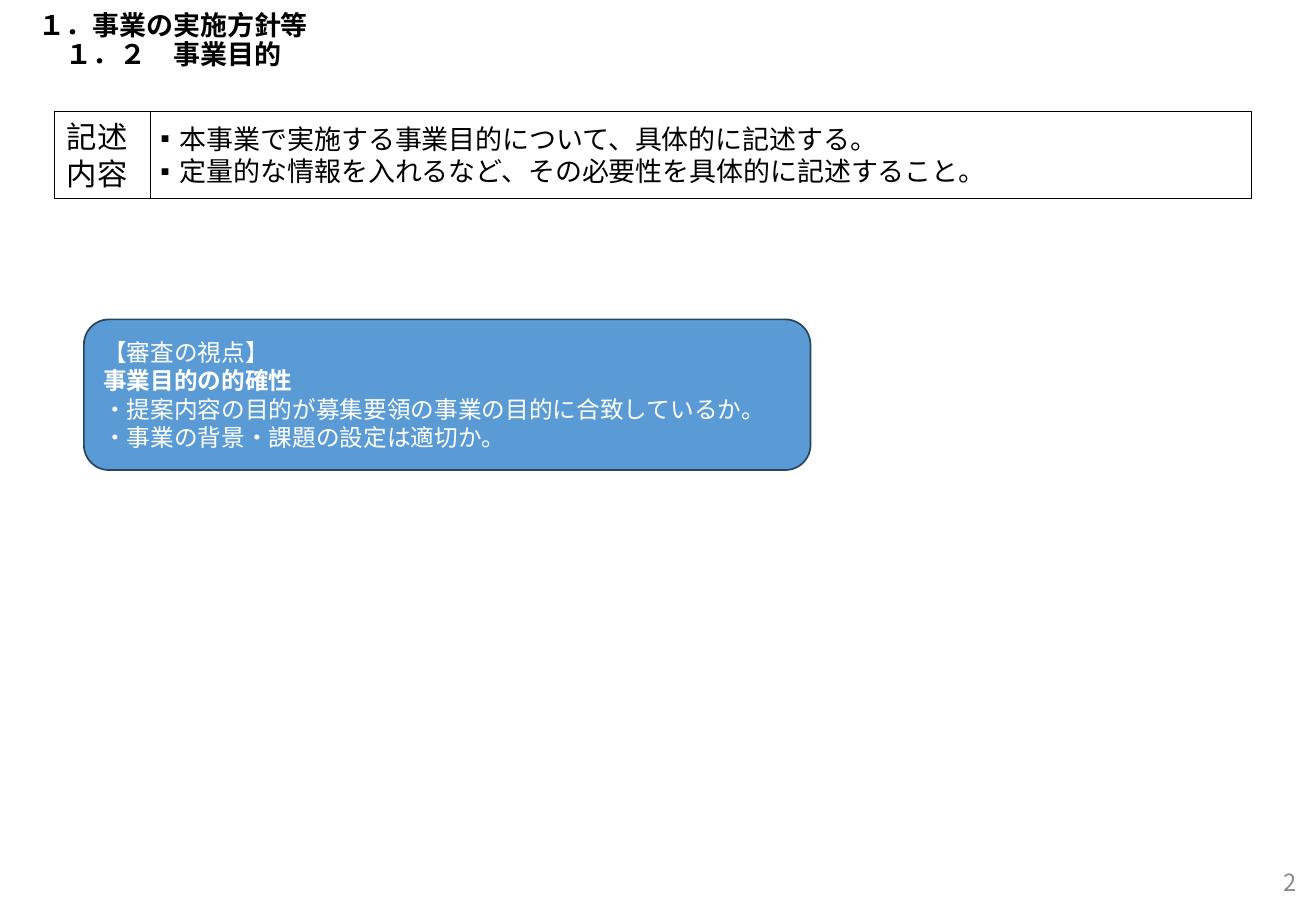
from dataclasses import dataclass

from lxml import etree
from pptx import Presentation
from pptx.dml.color import RGBColor
from pptx.enum import shapes, text
from pptx.oxml import ns
from pptx.util import Inches, Pt


@dataclass(frozen=True)
class Theme:
    font: str = "Noto Sans CJK JP"
    black: str = "000000"
    white: str = "FFFFFF"
    gray: str = "898989"
    blue: str = "5B9BD5"
    navy: str = "28445D"
    label: int = 18
    heading: int = 16
    note: int = 14


THEME = Theme()


def box(*lengths):
    return [Inches(v) for v in lengths]


def place(sp, left, top, width, height):
    sp.left, sp.top, sp.width, sp.height = box(left, top, width, height)


def outline(sp, fill, line, width):
    sp.fill.solid()
    sp.fill.fore_color.rgb = RGBColor.from_string(fill)
    sp.line.color.rgb = RGBColor.from_string(line)
    sp.line.width = Pt(width)


def add_box(s, kind, at, fill, line, width):
    sp = s.shapes.add_shape(kind, *box(*at))
    sp.shadow.inherit = False
    outline(sp, fill, line, width)
    return sp


def add_bullet(p, char, indent):
    pPr = p._p.get_or_add_pPr()
    pPr.set("marL", str(Inches(indent)))
    pPr.set("indent", str(-Inches(indent)))
    etree.SubElement(pPr, ns.qn("a:buChar")).set("char", char)


def write(sp, lines, size, color=THEME.black, bold=(), align=text.PP_ALIGN.LEFT,
          anchor=text.MSO_ANCHOR.MIDDLE, insets=(0.1, 0.05, 0.1, 0.05),
          spacing=1.0, bullet=None):
    tf = sp.text_frame
    tf.word_wrap = True
    tf.auto_size = text.MSO_AUTO_SIZE.NONE
    tf.vertical_anchor = anchor
    tf.margin_left, tf.margin_top, tf.margin_right, tf.margin_bottom = box(*insets)
    for i, line in enumerate(lines):
        p = tf.add_paragraph() if i else tf.paragraphs[0]
        p.alignment = align
        p.line_spacing = spacing
        p.space_before = Pt(0)
        if bullet:
            add_bullet(p, bullet, 0.16)
        for j, part in enumerate(line.split("\n")):
            if j:
                p.add_line_break()
            r = p.add_run()
            r.text = part
            r.font.name = THEME.font
            r.font.size = Pt(size)
            r.font.bold = i in bold
            r.font.color.rgb = RGBColor.from_string(color)
            ea = etree.SubElement(r._r.get_or_add_rPr(), ns.qn("a:ea"))
            ea.set("typeface", THEME.font)


def add_title(s):
    sp = s.shapes.title
    place(sp, 0.22, 0.05, 10.4, 0.6)
    write(sp, ["１．事業の実施方針等\n　１．２　事業目的"], THEME.heading,
          bold=(0,), anchor=text.MSO_ANCHOR.TOP, spacing=0.9)


def add_description(s):
    top, height = 0.92, 0.71
    sp = s.placeholders[1]
    place(sp, 1.24, top, 9.06, height)
    outline(sp, THEME.white, THEME.black, 0.5)
    write(sp, ["本事業で実施する事業目的について、具体的に記述する。",
               "定量的な情報を入れるなど、その必要性を具体的に記述すること。　"],
          THEME.heading, insets=(0.08, 0, 0.04, 0), bullet="▪")
    label = add_box(s, shapes.MSO_SHAPE.RECTANGLE, (0.45, top, 0.79, height),
                    THEME.white, THEME.black, 0.5)
    write(label, ["記述内容"], THEME.label)


def add_review_points(s):
    sp = add_box(s, shapes.MSO_SHAPE.ROUNDED_RECTANGLE, (0.69, 2.63, 5.98, 1.24),
                 THEME.blue, THEME.navy, 1)
    write(sp, ["【審査の視点】", "事業目的の的確性",
               "・提案内容の目的が募集要領の事業の目的に合致しているか。",
               "・事業の背景・課題の設定は適切か。"],
          THEME.note, THEME.white, bold=(1,))


def add_page_number(s, number):
    sp = s.shapes.add_textbox(*box(7.81, 7.22, 2.96, 0.21))
    write(sp, [number], THEME.note, THEME.gray, align=text.PP_ALIGN.RIGHT,
          anchor=text.MSO_ANCHOR.BOTTOM)


def main():
    prs = Presentation()
    prs.slide_width, prs.slide_height = box(10.83, 7.5)
    s = prs.slides.add_slide(prs.slide_layouts[1])
    add_title(s)
    add_description(s)
    add_review_points(s)
    add_page_number(s, "2")
    prs.save("out.pptx")


if __name__ == "__main__":
    main()
